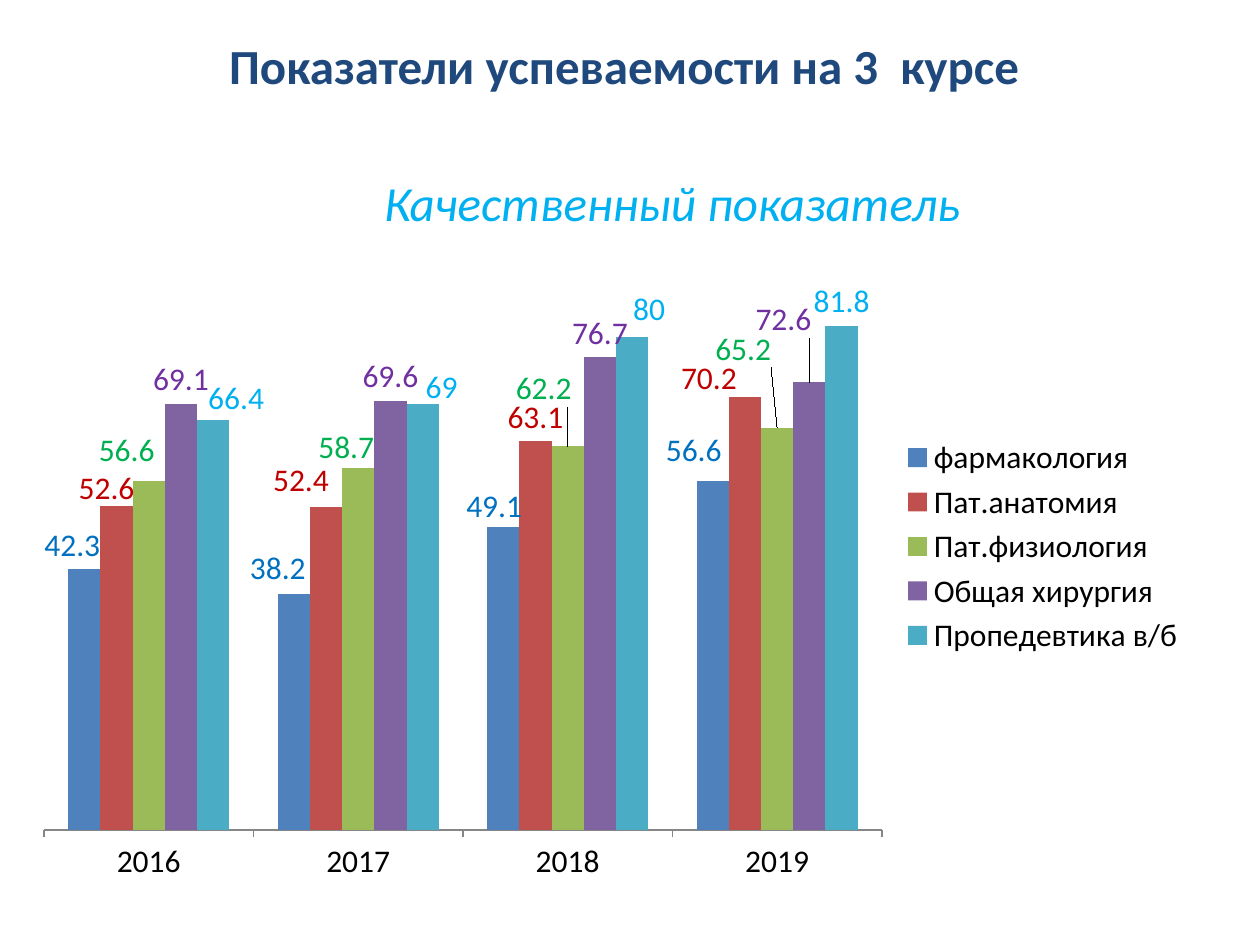
from dataclasses import dataclass, field

from lxml.etree import SubElement
from pptx import Presentation
from pptx.chart.data import CategoryChartData
from pptx.dml.color import RGBColor
from pptx.enum.chart import XL_CHART_TYPE as ChartType
from pptx.enum.chart import XL_LABEL_POSITION as LabelPosition
from pptx.enum.chart import XL_LEGEND_POSITION as LegendPosition
from pptx.enum.chart import XL_TICK_MARK as TickMark
from pptx.enum.text import MSO_ANCHOR as Anchor
from pptx.enum.text import PP_ALIGN as Align
from pptx.oxml.ns import qn
from pptx.util import Emu, Pt

PX_PER_INCH = 126
FONT = "Calibri"
YEARS = ["2016", "2017", "2018", "2019"]


@dataclass
class Box:
    left: int
    top: int
    width: int
    height: int

    def emu(self) -> list[Emu]:
        return [px(v) for v in (self.left, self.top, self.width, self.height)]


@dataclass
class Subject:
    name: str
    scores: list[float]
    bar: str
    label: str
    shifts: dict[int, tuple[int, int]] = field(default_factory=dict)


TITLE = Box(26, 14, 1196, 102)
SUBTITLE = Box(105, 166, 1134, 71)
CHART = Box(25, 193, 1173, 707)
PLOT = Box(19, 82, 838, 555)

SUBJECTS = [
    Subject("фармакология", [42.3, 38.2, 49.1, 56.6], "4F81BD", "0070C0",
            {0: (-12, 0), 1: (-16, -2), 2: (-9, 3), 3: (-19, -7)}),
    Subject("Пат.анатомия", [52.6, 52.4, 63.1, 70.2], "C0504D", "C00000",
            {0: (-10, 7), 1: (-25, -3), 3: (-36, 5)}),
    Subject("Пат.физиология", [56.6, 58.7, 62.2, 65.2], "9BBB59", "00B050",
            {0: (-22, -7), 1: (-12, 3), 2: (-24, -34), 3: (-34, -55)}),
    Subject("Общая хирургия", [69.1, 69.6, 76.7, 72.6], "8064A2", "7030A0",
            {3: (-26, -39)}),
    Subject("Пропедевтика в/б", [66.4, 69, 80, 81.8], "4BACC6", "00B0F0",
            {0: (23, 2), 1: (19, 7), 2: (17, -3)}),
]


def px(length: int) -> Emu:
    return Emu(round(length * 914400 / PX_PER_INCH))


def rgb(code: str) -> RGBColor:
    return RGBColor.from_string(code)


def style_font(font, size: int, color: str, bold: bool = False, italic: bool = False) -> None:
    font.name = FONT
    font.size = Pt(size)
    font.bold = bold
    font.italic = italic
    font.color.rgb = rgb(color)


def write(holder, text: str, **style) -> None:
    frame = holder.text_frame
    frame.word_wrap = True
    frame.vertical_anchor = Anchor.MIDDLE
    paragraph = frame.paragraphs[0]
    paragraph.alignment = Align.CENTER
    run = paragraph.add_run()
    run.text = text
    style_font(run.font, **style)


def set_layout(parent, index: int, **settings) -> None:
    for old in parent.findall(qn("c:layout")):
        parent.remove(old)
    layout = SubElement(parent, qn("c:layout"))
    parent.insert(index, layout)
    manual = SubElement(layout, qn("c:manualLayout"))
    for tag, value in settings.items():
        SubElement(manual, qn(f"c:{tag}")).set("val", str(value))


def style_series(series, subject: Subject) -> None:
    series.format.fill.solid()
    series.format.fill.fore_color.rgb = rgb(subject.bar)
    labels = series.data_labels
    labels.show_value = True
    labels.position = LabelPosition.OUTSIDE_END
    style_font(labels.font, 18, subject.label)
    for index, (dx, dy) in subject.shifts.items():
        label = series.points[index].data_label
        style_font(label.font, 18, subject.label)
        label.position = LabelPosition.OUTSIDE_END
        entry = labels._element.xpath(f"c:dLbl[c:idx/@val='{index}']")[0]
        set_layout(entry, 1, x=round(dx / CHART.width, 4), y=round(dy / CHART.height, 4))


def add_scores(slide) -> None:
    data = CategoryChartData()
    data.categories = YEARS
    for subject in SUBJECTS:
        data.add_series(subject.name, subject.scores)
    chart = slide.shapes.add_chart(ChartType.COLUMN_CLUSTERED, *CHART.emu(), data).chart
    style_font(chart.font, 18, "000000")
    chart.has_title = False

    chart.has_legend = True
    chart.legend.position = LegendPosition.RIGHT
    chart.legend.include_in_layout = False

    years = chart.category_axis
    years.major_tick_mark = TickMark.OUTSIDE
    years.has_major_gridlines = False
    years.format.line.color.rgb = rgb("868686")
    scale = chart.value_axis
    scale.visible = False
    scale.has_major_gridlines = False
    scale.minimum_scale = 0
    scale.maximum_scale = 90

    columns = chart.plots[0]
    columns.gap_width = 150
    columns.overlap = 0
    columns.vary_by_categories = False
    for series, subject in zip(columns.series, SUBJECTS):
        style_series(series, subject)

    plot_area = chart._chartSpace.xpath("c:chart/c:plotArea")[0]
    set_layout(plot_area, 0, layoutTarget="inner", xMode="edge", yMode="edge",
               x=round(PLOT.left / CHART.width, 4), y=round(PLOT.top / CHART.height, 4),
               w=round(PLOT.width / CHART.width, 4), h=round(PLOT.height / CHART.height, 4))


def main() -> None:
    deck = Presentation()
    deck.slide_width, deck.slide_height = px(1260), px(945)
    slide = deck.slides.add_slide(deck.slide_layouts[5])

    subtitle = slide.shapes.add_textbox(*SUBTITLE.emu())
    write(subtitle, "Качественный показатель", size=28, color="00B0F0", italic=True)
    add_scores(slide)
    heading = slide.shapes.title
    heading.left, heading.top, heading.width, heading.height = TITLE.emu()
    write(heading, "Показатели успеваемости на 3  курсе", size=28, color="1F497D", bold=True)

    deck.save("out.pptx")


if __name__ == "__main__":
    main()
